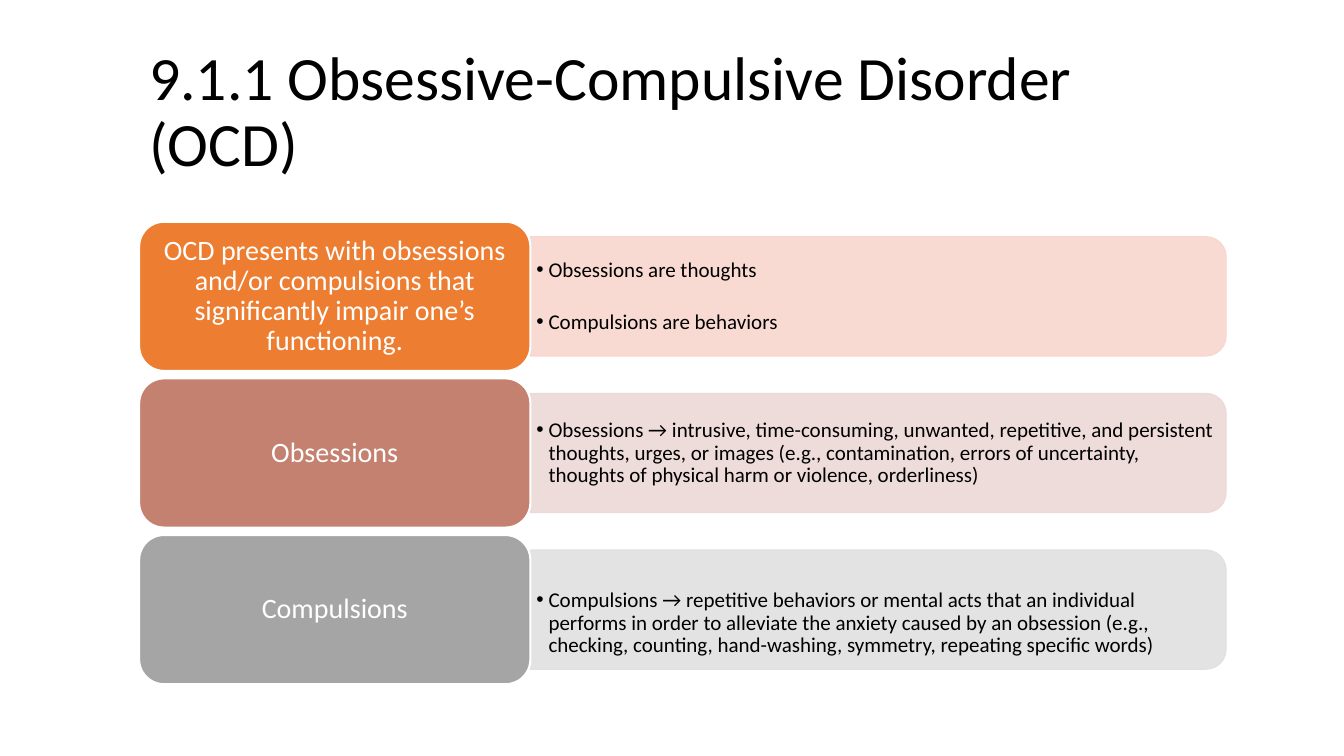
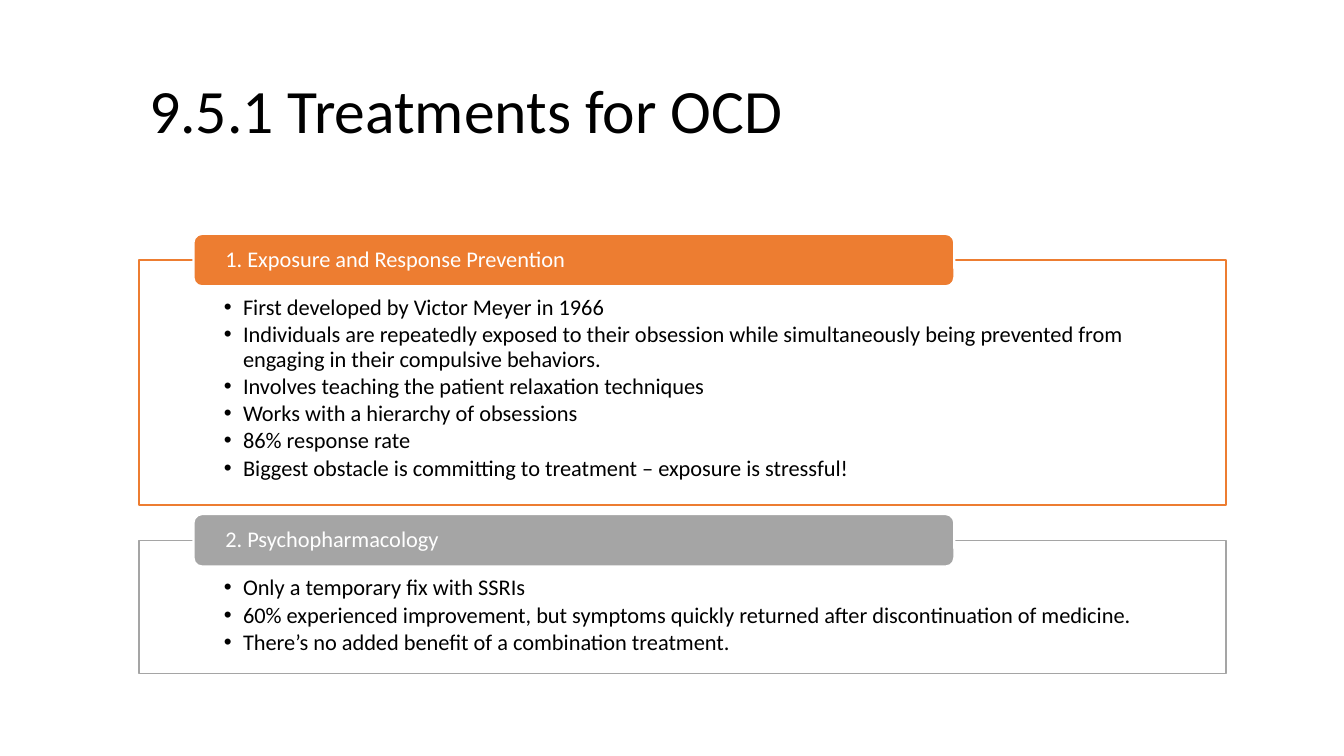
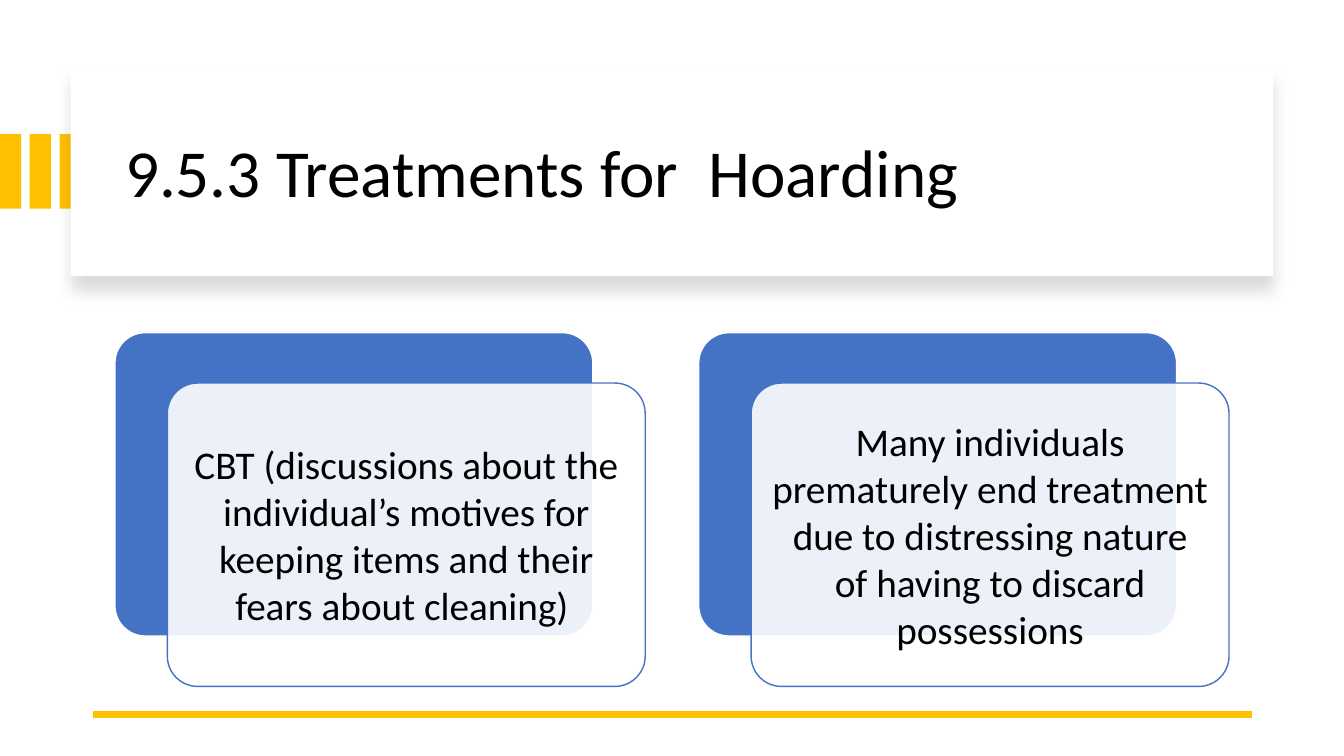
from pptx import Presentation
from pptx.util import Inches, Pt
from pptx.dml.color import RGBColor as RGB
from pptx.enum.shapes import MSO_SHAPE as Kind, MSO_CONNECTOR as Link
from pptx.enum.text import PP_ALIGN as Align, MSO_ANCHOR as Anchor, MSO_AUTO_SIZE as Fit
from pptx.oxml.ns import qn
from lxml.etree import SubElement as Sub

BLACK, WHITE = RGB(0, 0, 0), RGB(255, 255, 255)
ORANGE, GRAY = RGB(0xED, 0x7D, 0x31), RGB(0xA5, 0xA5, 0xA5)
CLAY, BLUE, GOLD = RGB(0xC4, 0x81, 0x70), RGB(0x44, 0x72, 0xC4), RGB(0xFF, 0xC0, 0)
PEACH, BLUSH, SILVER = RGB(0xF8, 0xD7, 0xCE), RGB(0xED, 0xD9, 0xD7), RGB(0xE1, 0xE1, 0xE1)

FONT = "Calibri"
LEFT, WIDE = 1.38, 10.78
TITLE = (LEFT, 0.4, WIDE, 1.45)
TITLE_ONLY, TWO_LISTS = 5, 3


def put(item, **vals):
    for name, val in vals.items():
        setattr(item, name, val)


def place(item, box):
    sides = ("left", "top", "width", "height")
    put(item, **{side: Inches(val) for side, val in zip(sides, box)})


def paint(shape, fill, line=None, width=1, alpha=None):
    shape.fill.solid()
    shape.fill.fore_color.rgb = fill
    if alpha:
        tone = shape._element.spPr.find(qn("a:solidFill"))[0]
        Sub(tone, qn("a:alpha"), val=str(alpha * 1000))
    if line is None:
        shape.line.fill.background()
    else:
        shape.line.color.rgb = line
        shape.line.width = Pt(width)


def draw(slide, kind, box, fill, **look):
    shape = slide.shapes.add_shape(kind, *map(Inches, box))
    shape.shadow.inherit = False
    paint(shape, fill, **look)
    return shape


def write(shape, lines, size, color=BLACK, pad=(0.1, 0.05, 0.1, 0.05),
          anchor=Anchor.MIDDLE, align=Align.LEFT, space=0.9, after=0, dent=0):
    """Fill a shape with paragraphs; a dent in inches makes them bullets."""
    frame = shape.text_frame
    put(frame, word_wrap=True, auto_size=Fit.NONE, vertical_anchor=anchor)
    sides = ("margin_left", "margin_top", "margin_right", "margin_bottom")
    put(frame, **{side: Inches(val) for side, val in zip(sides, pad)})
    for i, line in enumerate(lines):
        para = frame.add_paragraph() if i else frame.paragraphs[0]
        put(para, alignment=align, line_spacing=space,
            space_before=Pt(0), space_after=Pt(after))
        run = para.add_run()
        run.text = line
        put(run.font, name=FONT, size=Pt(size))
        run.font.color.rgb = color
        if dent:
            prop = para._p.get_or_add_pPr()
            prop.set("marL", str(Inches(dent)))
            prop.set("indent", str(-Inches(dent)))
            Sub(prop, qn("a:buFont"), typeface="Arial")
            Sub(prop, qn("a:buChar"), char="•")


def head(slide, text, box=TITLE, size=44):
    """Set the title and bring it in front of what is drawn so far."""
    title = slide.shapes.title
    place(title, box)
    write(title, [text], size)
    title._element.getparent().append(title._element)


def row(slide, top, label, items, fill, tint, after=2, drop=0):
    """Draw a label card with a bar of bullets; drop moves the bullets down."""
    card, tall, bar = WIDE * 0.36, 1.48, 1.18
    start, span, mid = LEFT + card, WIDE * 0.64, top + tall / 2
    side = draw(slide, Kind.ROUND_2_SAME_RECTANGLE,
                (start + (span - bar) / 2, mid - span / 2, bar, span),
                tint, line=tint, alpha=90)
    side.rotation = 90
    area = (start, mid - 0.53, span - 0.06, 1.07)
    note = slide.shapes.add_textbox(*map(Inches, area))
    write(note, items, 15, pad=(0.06, 0.03 + drop, 0.06, 0.03), after=after, dent=0.12)
    face = draw(slide, Kind.ROUNDED_RECTANGLE, (LEFT, top, card, tall),
                fill, line=WHITE, width=1.5)
    write(face, [label], 20, WHITE, pad=(0.08, 0.04, 0.08, 0.04), align=Align.CENTER)


def panel(slide, body, top, tall, label, items, color):
    """Outline a list placeholder and set its label over the top edge."""
    place(body, (LEFT, top, WIDE, tall))
    paint(body, WHITE, line=color, alpha=90)
    write(body, items, 16, pad=(0.84, 0.36, 0.84, 0.12),
          anchor=Anchor.TOP, after=2.2, dent=0.19)
    tab = draw(slide, Kind.ROUNDED_RECTANGLE,
               (LEFT + WIDE * 0.05, top - 0.26, WIDE * 0.7, 0.52),
               color, line=WHITE, width=1.5)
    write(tab, [label], 16, WHITE, pad=(0.29, 0, 0.29, 0))


def stack(slide, left, text):
    """Draw a text card lying over a blue one."""
    top, size = 3.3, (4.74, 3.01)
    back = draw(slide, Kind.ROUNDED_RECTANGLE, (left, top, *size), BLUE, line=WHITE)
    front = draw(slide, Kind.ROUNDED_RECTANGLE, (left + 0.52, top + 0.5, *size),
                 WHITE, line=BLUE, alpha=90)
    for card in (back, front):
        card.adjustments[0] = 0.1
    write(front, [text], 28, pad=(0.12,) * 4, align=Align.CENTER, space=1.0)


def shade(shape):
    """Cast a soft shadow straight down."""
    effect = shape._element.spPr.find(qn("a:effectLst"))
    cast = Sub(effect, qn("a:outerShdw"), blurRad=str(Pt(11)), dist=str(Pt(10)),
               dir=str(90 * 60000), algn="t", rotWithShape="0")
    tone = Sub(cast, qn("a:srgbClr"), val=str(BLACK))
    Sub(tone, qn("a:alpha"), val="15000")


def frame_page(slide):
    for i in range(3):
        draw(slide, Kind.RECTANGLE, (0.59 * i / 2, 1.33, 0.21, 0.74), GOLD)
    shade(draw(slide, Kind.RECTANGLE, (0.7, 0.67, 11.93, 2.07), WHITE))
    rule = slide.shapes.add_connector(
        Link.STRAIGHT, *map(Inches, (12.42, 7.09, 0.92, 7.09)))
    rule.line.color.rgb = GOLD
    rule.line.width = Pt(4.5)
    Sub(rule._element.spPr, qn("a:effectLst"))


def disorder(slide):
    head(slide, "9.1.1 Obsessive-Compulsive Disorder (OCD)")
    rows = [
        dict(label="OCD presents with obsessions and/or compulsions that "
                   "significantly impair one’s functioning.",
             items=["Obsessions are thoughts", "Compulsions are behaviors"],
             fill=ORANGE, tint=PEACH, after=20.6),
        dict(label="Obsessions",
             items=["Obsessions → intrusive, time-consuming, unwanted, repetitive, "
                    "and persistent thoughts, urges, or images (e.g., contamination, "
                    "errors of uncertainty, thoughts of physical harm or violence, "
                    "orderliness)"],
             fill=CLAY, tint=BLUSH),
        dict(label="Compulsions",
             items=["Compulsions → repetitive behaviors or mental acts that an "
                    "individual performs in order to alleviate the anxiety caused by "
                    "an obsession (e.g., checking, counting, hand-washing, symmetry, "
                    "repeating specific words)"],
             fill=GRAY, tint=SILVER, drop=0.26),
    ]
    for i, part in enumerate(rows):
        row(slide, 2.2 + 1.48 * 1.05 * i, **part)


def therapy(slide):
    head(slide, "9.5.1 Treatments for OCD")
    first, second = [item for item in slide.placeholders
                     if item.placeholder_format.idx]
    panel(slide, first, 2.58, 2.43, "1. Exposure and Response Prevention", [
        "First developed by Victor Meyer in 1966",
        "Individuals are repeatedly exposed to their obsession while simultaneously "
        "being prevented from engaging in their compulsive behaviors.",
        "Involves teaching the patient relaxation techniques",
        "Works with a hierarchy of obsessions",
        "86% response rate",
        "Biggest obstacle is committing to treatment – exposure is stressful!",
    ], ORANGE)
    panel(slide, second, 5.36, 1.32, "2. Psychopharmacology", [
        "Only a temporary fix with SSRIs",
        "60% experienced improvement, but symptoms quickly returned after "
        "discontinuation of medicine.",
        "There’s no added benefit of a combination treatment.",
    ], GRAY)


def hoarding(slide):
    frame_page(slide)
    head(slide, "9.5.3 Treatments for  Hoarding", (1.14, 0.89, 11.13, 1.7), 48)
    cards = ["CBT (discussions about the individual’s motives for keeping items "
             "and their fears about cleaning) ",
             "Many individuals prematurely end treatment due to distressing "
             "nature of having to discard possessions"]
    for i, text in enumerate(cards):
        stack(slide, 1.14 + 5.79 * i, text)


def main():
    deck = Presentation()
    put(deck, slide_width=Inches(13.33), slide_height=Inches(7.5))
    pages = [(disorder, TITLE_ONLY), (therapy, TWO_LISTS), (hoarding, TITLE_ONLY)]
    for build, layout in pages:
        build(deck.slides.add_slide(deck.slide_layouts[layout]))
    deck.save("out.pptx")


if __name__ == "__main__":
    main()
